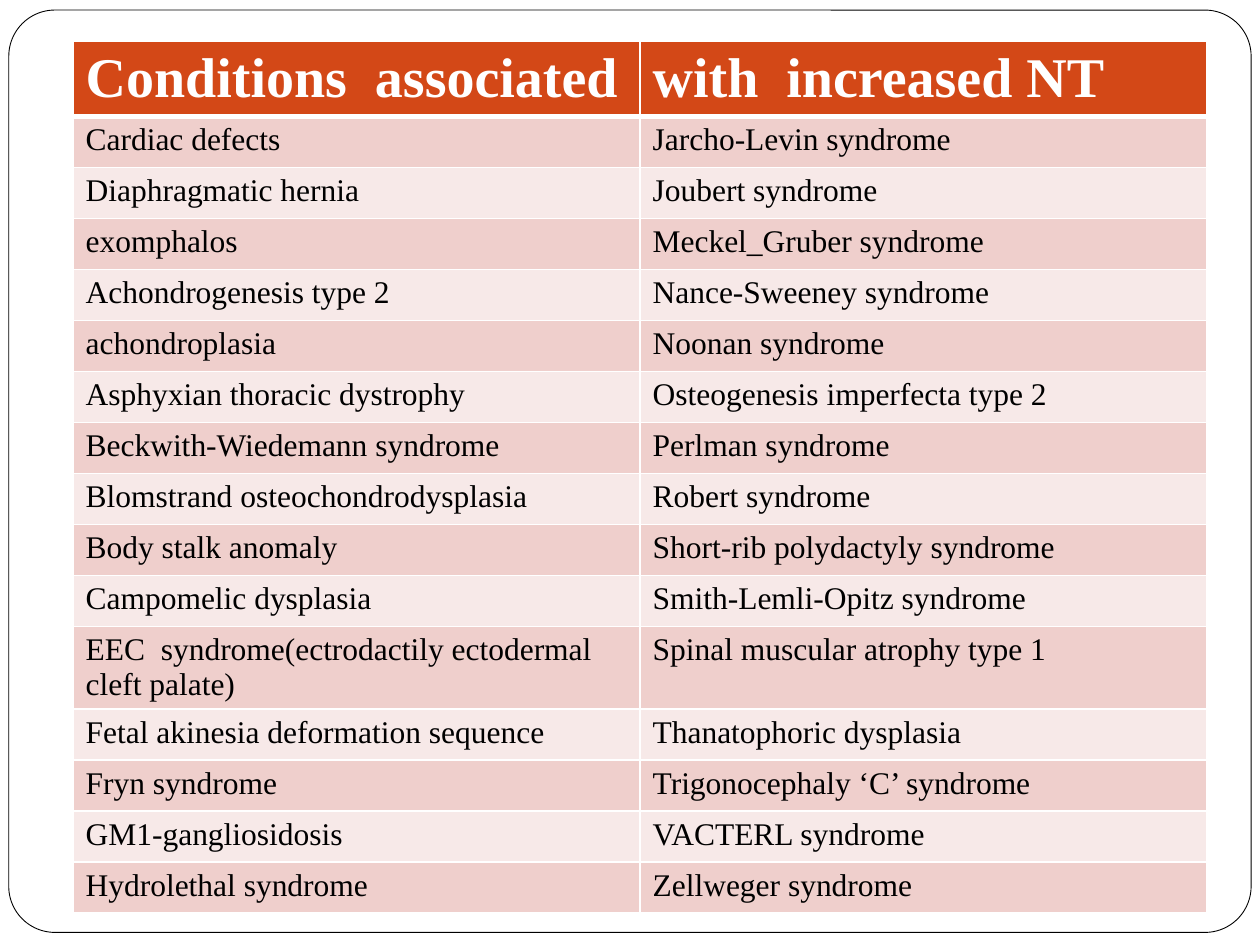
from lxml import etree
from pptx import Presentation
from pptx.dml.color import RGBColor
from pptx.enum.shapes import MSO_SHAPE as Shape
from pptx.oxml.ns import qn
from pptx.util import Inches, Pt

COLORS = {
    "white": "FFFFFF",
    "black": "000000",
    "header": "D34817",
    "odd": "EFCFCC",
    "even": "F7E9E8",
}
FONT = "Times New Roman"
ROWS = [
    ("Conditions  associated", "with  increased NT"),
    ("Cardiac defects", "Jarcho-Levin syndrome"),
    ("Diaphragmatic hernia", "Joubert syndrome"),
    ("exomphalos", "Meckel_Gruber syndrome"),
    ("Achondrogenesis type 2", "Nance-Sweeney syndrome"),
    ("achondroplasia", "Noonan syndrome"),
    ("Asphyxian thoracic dystrophy", "Osteogenesis imperfecta type 2"),
    ("Beckwith-Wiedemann syndrome", "Perlman syndrome"),
    ("Blomstrand osteochondrodysplasia", "Robert syndrome"),
    ("Body stalk anomaly", "Short-rib polydactyly syndrome"),
    ("Campomelic dysplasia", "Smith-Lemli-Opitz syndrome"),
    ("EEC  syndrome(ectrodactily ectodermal cleft palate)",
     "Spinal muscular atrophy type 1"),
    ("Fetal akinesia deformation sequence", "Thanatophoric dysplasia"),
    ("Fryn syndrome", "Trigonocephaly ‘C’ syndrome"),
    ("GM1-gangliosidosis", "VACTERL syndrome"),
    ("Hydrolethal syndrome", "Zellweger syndrome"),
]


def color(name):
    return RGBColor.from_string(COLORS[name])


def set_borders(cell, widths):
    """Draw white cell borders; the lines must come before the fill."""
    properties = cell._tc.get_or_add_tcPr()
    for index, (side, width) in enumerate(widths.items()):
        line = etree.Element(qn(f"a:{side}"), w=str(Pt(width)))
        fill = etree.SubElement(line, qn("a:solidFill"))
        etree.SubElement(fill, qn("a:srgbClr"), val=COLORS["white"])
        properties.insert(index, line)


deck = Presentation()
deck.slide_width, deck.slide_height = Inches(10), Inches(7.5)
page = deck.slides.add_slide(deck.slide_layouts[6])

# Rounded frame around the page
frame = page.shapes.add_shape(
    Shape.ROUNDED_RECTANGLE, Inches(0.07), Inches(0.08), Inches(9.86), Inches(7.32))
frame.adjustments[0] = 0.05
frame.shadow.inherit = False
frame.fill.solid()
frame.fill.fore_color.rgb = color("white")
frame.line.color.rgb = color("black")
frame.line.width = Pt(0.5)

# Table of conditions; rows with larger or wrapped text grow to fit
table = page.shapes.add_table(
    len(ROWS), 2, Inches(0.58), Inches(0.33), Inches(9), Inches(6.48)).table

for row_index, texts in enumerate(ROWS):
    is_header = row_index == 0
    fill_name = "header" if is_header else "odd" if row_index % 2 else "even"
    borders = {
        "lnL": 1,
        "lnR": 1,
        "lnT": 3 if row_index == 1 else 1,
        "lnB": 3 if is_header else 1,
    }
    for column_index, text in enumerate(texts):
        cell = table.cell(row_index, column_index)
        cell.fill.solid()
        cell.fill.fore_color.rgb = color(fill_name)
        set_borders(cell, borders)
        cell.text_frame.text = text
        font = cell.text_frame.paragraphs[0].runs[0].font
        font.name = FONT
        font.size = Pt(32 if is_header else 18)
        font.bold = is_header
        font.color.rgb = color("white" if is_header else "black")

deck.save("out.pptx")
